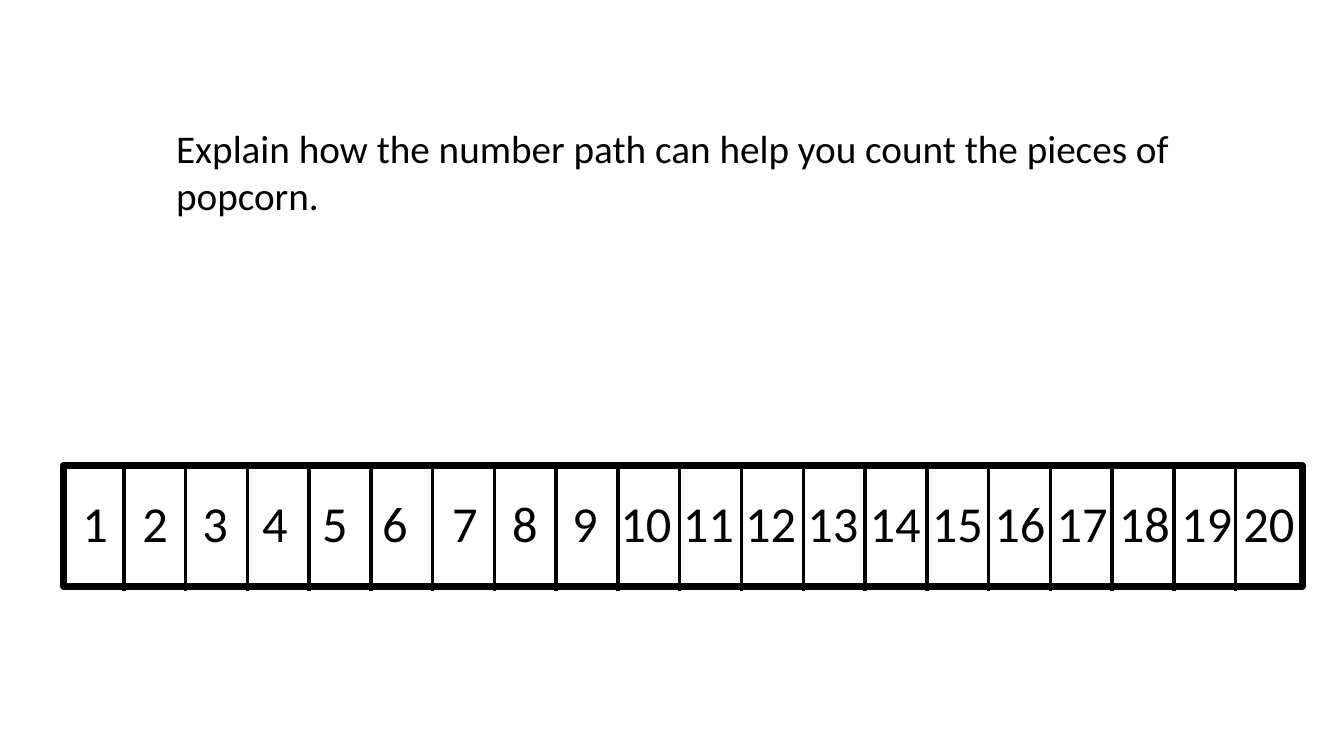
from lxml import etree
from pptx import Presentation
from pptx import util as u
from pptx.dml.color import RGBColor
from pptx.enum import shapes, text
from pptx.oxml.ns import qn

BLACK = RGBColor(0, 0, 0)
BOX_FORMAT = {"word_wrap": True, "auto_size": text.MSO_AUTO_SIZE.SHAPE_TO_FIT_TEXT}
CELL_COUNT = 20
FIRST_DIVIDER, LAST_DIVIDER = 3.12, 31.14
DIVIDER_TOP, DIVIDER_BOTTOM = 11.66, 14.88
NUMBERS_LEFT, INSET = 1.55, 0.25
NUMBER_RUNS = [(6, 2.4, 1.51), (3, 11.72, 1.51), (11, 16.28, 1.57)]


def add_text(parent, wording, left, top, width, height, size):
    box = parent.add_textbox(u.Cm(left), u.Cm(top), u.Cm(width), u.Cm(height))
    for name, value in BOX_FORMAT.items():
        setattr(box.text_frame, name, value)
    paragraph = box.text_frame.paragraphs[0]
    run = paragraph.add_run()
    run.text = wording
    for name, value in {"name": "Calibri", "size": u.Pt(size)}.items():
        setattr(run.font, name, value)
    run.font.color.rgb = BLACK
    return paragraph


def set_line(shape, width):
    shape.line.color.rgb = BLACK
    shape.line.width = u.Pt(width)


presentation = Presentation()
presentation.slide_width = u.Cm(33.87)
presentation.slide_height = u.Cm(19.05)
slide = presentation.slides.add_slide(presentation.slide_layouts[6])

add_text(
    slide.shapes,
    "Explain how the number path can help you count the pieces of popcorn.",
    4.19, 3, 27.56, 2.64, 28,
)

number_path = slide.shapes.add_group_shape().shapes
frame = number_path.add_shape(
    shapes.MSO_SHAPE.RECTANGLE, u.Cm(1.6), u.Cm(11.73), u.Cm(31.22), u.Cm(3.05)
)
frame.shadow.inherit = False
frame.fill.background()
set_line(frame, 4.75)

divider_step = (LAST_DIVIDER - FIRST_DIVIDER) / (CELL_COUNT - 2)
for index in range(CELL_COUNT - 1):
    x = u.Cm(FIRST_DIVIDER + index * divider_step)
    divider = number_path.add_connector(
        shapes.MSO_CONNECTOR.STRAIGHT, x, u.Cm(DIVIDER_TOP), x, u.Cm(DIVIDER_BOTTOM)
    )
    set_line(divider, 2.5)
    etree.SubElement(divider._element.spPr, qn("a:effectLst"))

numbers = "".join(f"\t{number}" for number in range(1, CELL_COUNT + 1))
numbers_paragraph = add_text(number_path, numbers, NUMBERS_LEFT, 12.27, 31.42, 1.8, 36)
tab_list = etree.SubElement(numbers_paragraph._p.get_or_add_pPr(), qn("a:tabLst"))
for count, start, step in NUMBER_RUNS:
    for index in range(count):
        position = u.Cm(start + index * step - NUMBERS_LEFT - INSET)
        etree.SubElement(tab_list, qn("a:tab"), pos=str(position), algn="ctr")

presentation.save("out.pptx")
